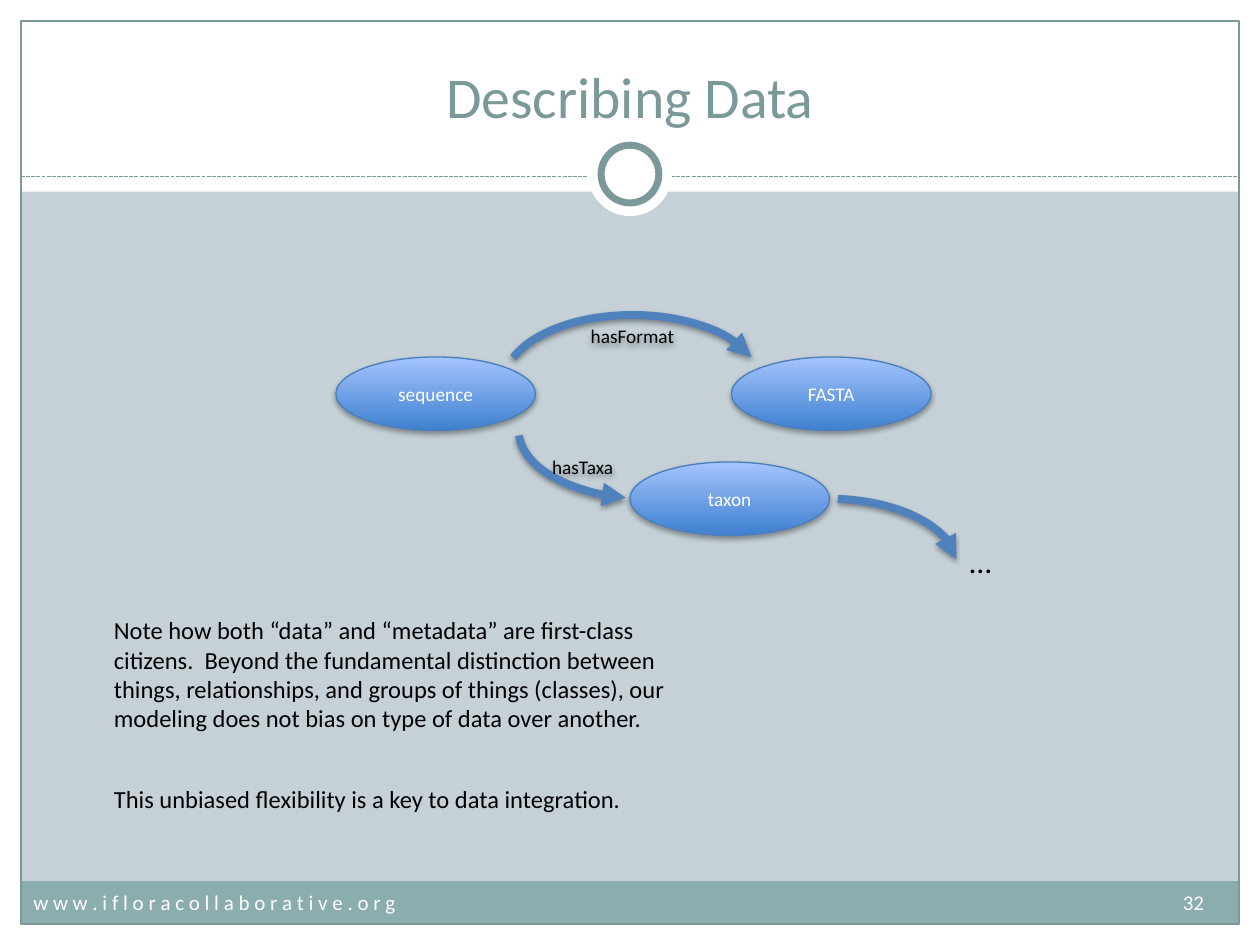
from lxml.etree import SubElement
from pptx import Presentation
from pptx.dml.color import RGBColor
from pptx.enum.dml import MSO_LINE
from pptx.enum.shapes import MSO_CONNECTOR, MSO_SHAPE as SHAPE
from pptx.enum.text import MSO_ANCHOR as ANCHOR, MSO_AUTO_SIZE as AUTO, PP_ALIGN as ALIGN
from pptx.oxml.ns import qn
from pptx.util import Pt

COLORS = {
    "back": "C5D1D7", "white": "FFFFFF", "black": "000000", "band": "8CADAE",
    "accent": "7C999A", "node_low": "3F80CE", "node_high": "A4C4FF",
    "node_line": "4B7EBC", "arc": "4F81BD",
}
NOTES = [
    "Note how both “data” and “metadata” are first-class citizens.  Beyond the fundamental "
    "distinction between things, relationships, and groups of things (classes), our modeling "
    "does not bias on type of data over another.",
    "This unbiased flexibility is a key to data integration.",
]


def rgb(name):
    """Return the named colour."""
    return RGBColor.from_string(COLORS[name])


def set_all(obj, values):
    """Set each attribute of obj from a dict."""
    for key, value in values.items():
        setattr(obj, key, value)


def write(tf, paragraphs, size, color, align=ALIGN.LEFT, **frame):
    """Write paragraphs of one style into a text frame."""
    set_all(tf, {"word_wrap": True, "auto_size": AUTO.NONE, **frame})
    for i, text in enumerate(paragraphs):
        p = tf.add_paragraph() if i else tf.paragraphs[0]
        p.alignment = align
        r = p.add_run()
        r.text = text
        set_all(r.font, {"size": Pt(size), "name": "Calibri"})
        r.font.color.rgb = rgb(color)


def add_shape(s, kind, box, fill=None, line=None, width=0.75):
    """Add a flat preset shape with an optional fill and line."""
    sp = s.shapes.add_shape(kind, *map(Pt, box))
    sp.shadow.inherit = False
    if fill:
        sp.fill.solid()
        sp.fill.fore_color.rgb = rgb(fill)
    else:
        sp.fill.background()
    if line:
        sp.line.color.rgb = rgb(line)
        sp.line.width = Pt(width)
    else:
        sp.line.fill.background()
    return sp


def add_shadow(sp, alpha, dist):
    """Give a shape a soft shadow straight below it."""
    effects = sp._element.spPr.find(qn("a:effectLst"))
    shadow = SubElement(effects, qn("a:outerShdw"), blurRad=str(Pt(3.15)),
                        dist=str(Pt(dist)), dir="5400000", rotWithShape="0")
    color = SubElement(shadow, qn("a:srgbClr"), val=COLORS["black"])
    SubElement(color, qn("a:alpha"), val=str(alpha * 1000))


def add_frame(s, box):
    """Draw the white margins, footer band, border, divider and ring."""
    x, y, w, h = box
    m = 12
    for edge in [(x, y + h - m, w, m), (x, y, w, 109.5), (x, y, m, h), (x + w - m, y, m, h)]:
        add_shape(s, SHAPE.RECTANGLE, edge, "white")
    add_shape(s, SHAPE.RECTANGLE, (x + m, y + h - m - 24.5, w - 2 * m, 24.5), "band")
    add_shape(s, SHAPE.RECTANGLE, (x + m, y + m, w - 2 * m, h - 2 * m), line="accent")

    rule = s.shapes.add_connector(MSO_CONNECTOR.STRAIGHT, Pt(x + m), Pt(y + 101),
                                  Pt(x + w - m), Pt(y + 101))
    rule.line.color.rgb = rgb("accent")
    set_all(rule.line, {"width": Pt(0.75), "dash_style": MSO_LINE.SQUARE_DOT})
    SubElement(rule._element.spPr, qn("a:effectLst"))

    for d, line in [(48, None), (33, "accent")]:
        circle = (x + (w - d) / 2, y + 99.5 - d / 2, d, d)
        add_shape(s, SHAPE.OVAL, circle, "white", line, 4)


def add_title(s, box, text):
    """Place the title placeholder in front of the frame."""
    title = s.shapes.title
    set_all(title, dict(zip(("left", "top", "width", "height"), map(Pt, box))))
    write(title.text_frame, [text], 33, "accent", ALIGN.CENTER, vertical_anchor=ANCHOR.BOTTOM)
    s.shapes._spTree.append(title._element)


def add_footer(s, box, address, number):
    """Write the spaced address and the right-tabbed page number."""
    tf = s.shapes.add_textbox(*map(Pt, box)).text_frame
    write(tf, [" ".join(address) + "\t" + number], 12, "white", word_wrap=False)
    tabs = SubElement(tf.paragraphs[0]._p.get_or_add_pPr(), qn("a:tabLst"))
    SubElement(tabs, qn("a:tab"), pos=str(Pt(box[2] - 26)), algn="r")


def add_node(s, box, text):
    """Add a gradient ellipse with a label."""
    sp = add_shape(s, SHAPE.OVAL, box, line="node_line")
    sp.fill.gradient()
    sp.fill.gradient_angle = 90
    for stop, name in zip(sp.fill.gradient_stops, ("node_low", "node_high")):
        stop.color.rgb = rgb(name)
    add_shadow(sp, 35, 1.8)
    write(sp.text_frame, [text], 11, "white", ALIGN.CENTER, vertical_anchor=ANCHOR.MIDDLE)


def add_arc(s, box, angles, text=None, align=ALIGN.CENTER, flip=False):
    """Add a curved arrow between two angles in degrees."""
    sp = add_shape(s, SHAPE.ARC, box, line="arc", width=4.5)
    for i, angle in enumerate(angles):
        sp.adjustments[i] = angle * 0.6
    if flip:
        sp._element.spPr.get_or_add_xfrm().set("flipH", "1")
    SubElement(sp.line._get_or_add_ln(), qn("a:tailEnd"), type="triangle")
    add_shadow(sp, 38, 1.6)
    if text:
        write(sp.text_frame, [text], 11, "black", align, vertical_anchor=ANCHOR.MIDDLE)


def add_graph(s, box):
    """Draw the nodes, their relations and the trailing ellipsis."""
    x, y = box[:2]
    node, arc = (114, 42), (147, 78)
    add_node(s, (x, y + 24, *node), "sequence")
    add_arc(s, (x + 96, y, *arc), (192.13, 347.71), "hasFormat")
    add_node(s, (x + 226, y + 24, *node), "FASTA")
    add_arc(s, (x + 104.5, y + 27, *arc), (2.23, 72.07), "hasTaxa", ALIGN.RIGHT, True)
    add_node(s, (x + 168, y + 84, *node), "taxon")
    add_arc(s, (x + 208, y + 105, *arc), (277.76, 356.6))
    more = s.shapes.add_textbox(*map(Pt, (x + 355, y + 126, 27, 29)))
    write(more.text_frame, ["…"], 18, "black", word_wrap=False, auto_size=AUTO.SHAPE_TO_FIT_TEXT)


def add_notes(s, box):
    """Write the explanatory paragraphs."""
    tf = s.shapes.add_textbox(*map(Pt, box)).text_frame
    write(tf, NOTES, 14, "black", auto_size=AUTO.SHAPE_TO_FIT_TEXT)
    for p, gap in zip(tf.paragraphs, (6, 29)):
        p.space_before = Pt(gap)


def main():
    """Build and save the slide."""
    prs = Presentation()
    set_all(prs, {"slide_width": Pt(720), "slide_height": Pt(540)})
    s = prs.slides.add_slide(prs.slide_layouts[5])
    s.background.fill.solid()
    s.background.fill.fore_color.rgb = rgb("back")
    add_frame(s, (0, 0, 720, 540))
    add_title(s, (24, 18, 672, 60), "Describing Data")
    add_footer(s, (12, 505, 695, 29), "www.ifloracollaborative.org", "32")
    add_graph(s, (192, 180, 382, 155))
    add_notes(s, (58, 348, 360, 121))
    prs.save("out.pptx")


if __name__ == "__main__":
    main()
